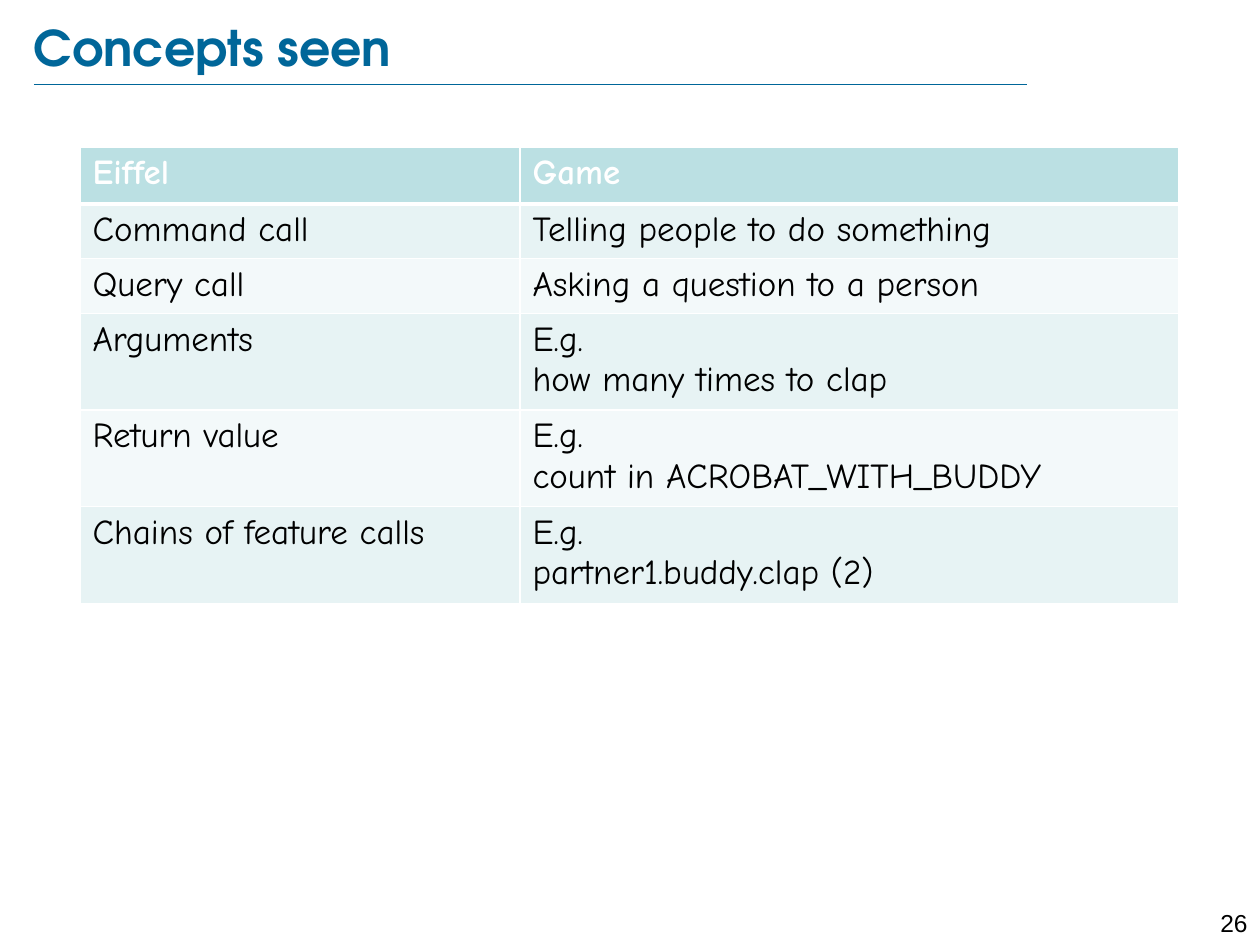
from lxml.etree import SubElement
from pptx import Presentation
from pptx.dml.color import RGBColor
from pptx.enum.shapes import MSO_CONNECTOR
from pptx.enum.text import MSO_ANCHOR, PP_ALIGN
from pptx.oxml.ns import qn
from pptx.util import Emu, Pt

TITLE = "Concepts seen"
PAGE_NUMBER = "26"
CONCEPTS = [
    ("Eiffel", "Game"),
    ("Command call", "Telling people to do something"),
    ("Query call", "Asking a question to a person"),
    ("Arguments", "E.g.\vhow many times to clap"),
    ("Return value", "E.g.\vcount in ACROBAT_WITH_BUDDY"),
    ("Chains of feature calls", "E.g.\vpartner1.buddy.clap (2)"),
]
COLUMN_WIDTHS = (440, 659)
ROW_HEIGHTS = (57, 53, 53, 93, 93, 93)
HEADER_FILL, BAND_FILLS = "BBE0E3", ("F3F9FA", "E7F3F4")
BLUE, WHITE, BLACK = "006699", "FFFFFF", "000000"


def px(length):
    return Emu(round(length * 914400 / 126))


def color(value):
    return RGBColor.from_string(value)


def style(paragraph, font_name, size, value, bold=False):
    for span in paragraph.runs:
        span.font.name = font_name
        span.font.size = Pt(size)
        span.font.bold = bold
        span.font.color.rgb = color(value)


def add_borders(cell, bottom_width):
    """Draw white cell borders; call before the cell is filled."""
    properties = cell._tc.get_or_add_tcPr()
    for side, width in (("L", 1), ("R", 1), ("T", 1), ("B", bottom_width)):
        line = SubElement(properties, qn(f"a:ln{side}"), w=str(Pt(width)))
        fill = SubElement(line, qn("a:solidFill"))
        SubElement(fill, qn("a:srgbClr"), val=WHITE)


def add_title(page):
    title = page.shapes.title
    title.left, title.top, title.width, title.height = map(px, (34, 16, 1095, 61))
    frame = title.text_frame
    frame.margin_left = frame.margin_right = frame.margin_top = frame.margin_bottom = 0
    frame.vertical_anchor = MSO_ANCHOR.MIDDLE
    frame.text = TITLE
    frame.paragraphs[0].alignment = PP_ALIGN.LEFT
    style(frame.paragraphs[0], "TeX Gyre Adventor", 28, BLUE, True)

    rule = page.shapes.add_connector(MSO_CONNECTOR.STRAIGHT, px(34), px(84), px(1027), px(84))
    rule.line.color.rgb = color(BLUE)
    rule.line.width = Pt(0.25)
    SubElement(rule._element.spPr, qn("a:effectLst"))


def add_page_number(page):
    box = page.shapes.add_textbox(px(1191), px(902), px(69), px(30))
    box.text_frame.word_wrap = True
    box.text_frame.text = PAGE_NUMBER
    para = box.text_frame.paragraphs[0]
    para.alignment = PP_ALIGN.RIGHT
    style(para, "Arial", 14, BLACK)


def add_concepts(page):
    table = page.shapes.add_table(
        len(CONCEPTS), len(COLUMN_WIDTHS), px(80), px(147),
        px(sum(COLUMN_WIDTHS)), px(sum(ROW_HEIGHTS))).table
    for column, width in zip(table.columns, COLUMN_WIDTHS):
        column.width = px(width)
    for index, (texts, height) in enumerate(zip(CONCEPTS, ROW_HEIGHTS)):
        table.rows[index].height = px(height)
        header = index == 0
        for cell, text in zip(table.rows[index].cells, texts):
            add_borders(cell, 3 if header else 1)
            cell.fill.solid()
            cell.fill.fore_color.rgb = color(HEADER_FILL if header else BAND_FILLS[index % 2])
            para = cell.text_frame.paragraphs[0]
            para.text = text
            style(para, "Comic Neue", 20, WHITE if header else BLACK, header)


def main():
    deck = Presentation()
    deck.slide_width, deck.slide_height = px(1260), px(945)
    page = deck.slides.add_slide(deck.slide_layouts[5])
    add_title(page)
    add_page_number(page)
    add_concepts(page)
    deck.save("out.pptx")


if __name__ == "__main__":
    main()
